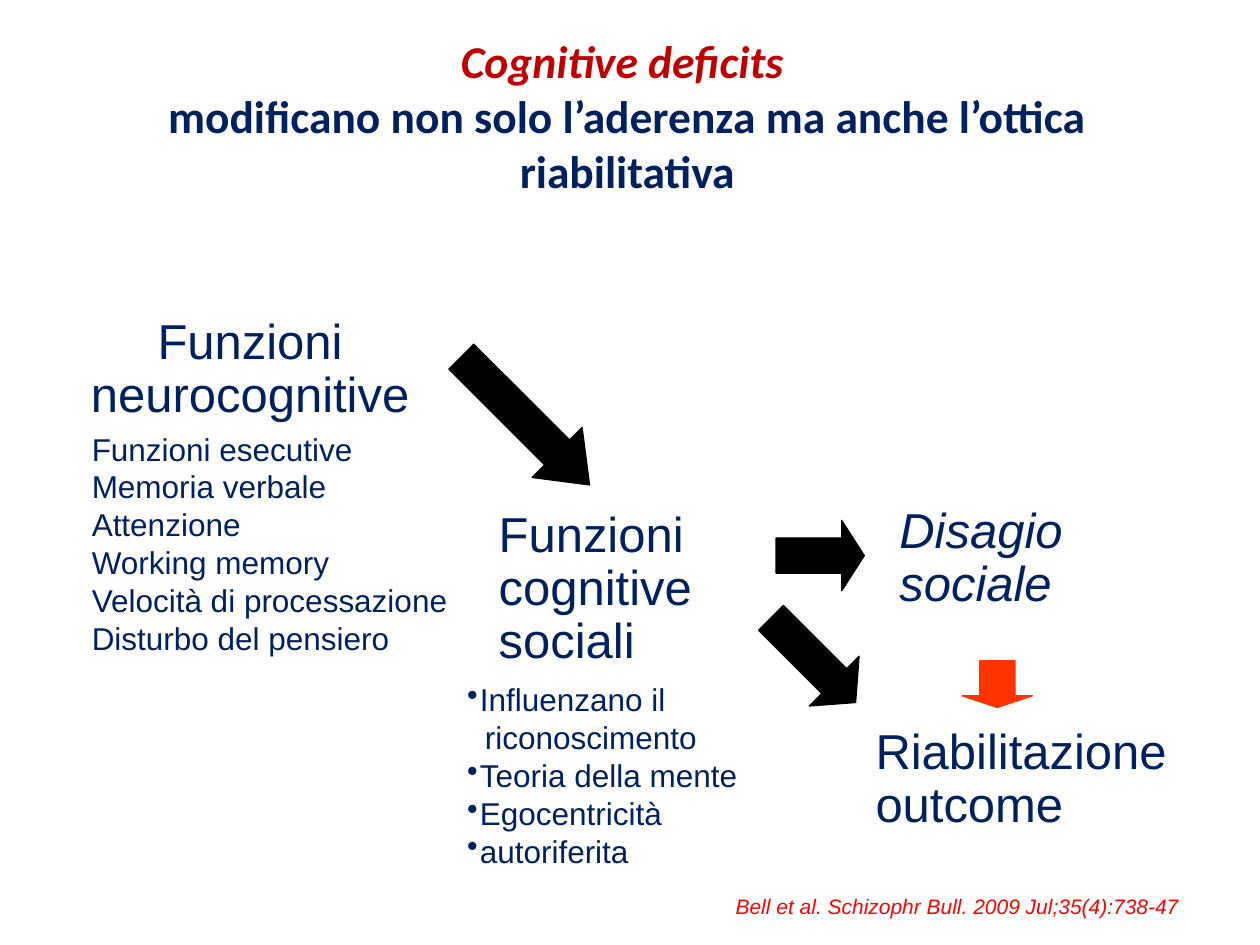
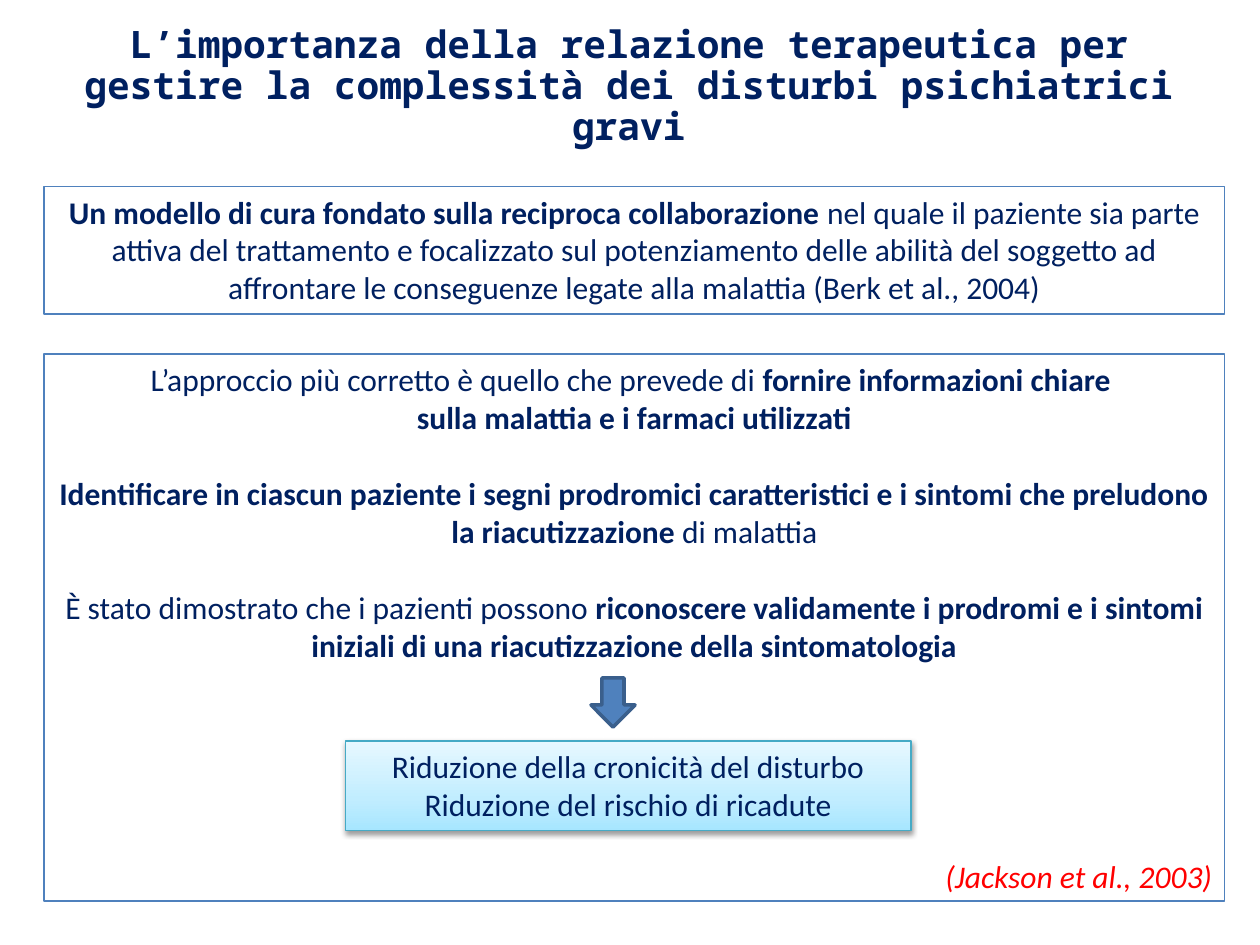
from dataclasses import dataclass

from pptx import Presentation
from pptx import util as u
from pptx.dml.color import RGBColor
from pptx.enum import shapes, text
from pptx.oxml import parse_xml
from pptx.oxml.ns import nsdecls, qn

COLUMNS, ROWS = 100, 75
CELL = u.Inches(0.1)
NAVY, RED, CRIMSON, ORANGE = "002060", "FF0000", "C00000", "FF3300"
BLACK, WHITE, BLUE, DARK_BLUE, TEAL = "000000", "FFFFFF", "4F81BD", "3A5F8C", "46AAC5"
LEFT, CENTER, RIGHT = text.PP_ALIGN.LEFT, text.PP_ALIGN.CENTER, text.PP_ALIGN.RIGHT
BODY_LINE = 22  # points taken by one line of 18-point Calibri


@dataclass
class Box:
    """An area measured in grid cells."""
    left: float
    top: float
    width: float
    height: float

    def area(self, column, row, width, height):
        return Box(self.left + column, self.top + row, width, height)

    def lengths(self):
        return [round(cells * CELL) for cells in (self.left, self.top, self.width, self.height)]


def color(hex_string):
    return RGBColor.from_string(hex_string)


def set_font(font, size, name, hex_string=NAVY, bold=False, italic=False):
    font.size, font.name = u.Pt(size), name
    font.color.rgb = color(hex_string)
    font.bold, font.italic = bold, italic


def next_paragraph(frame):
    """Return the first paragraph while it is unused, otherwise a new one."""
    first = frame.paragraphs[0]
    return frame.add_paragraph() if first.runs else first


def add_title(slide, box, name, size):
    """Place the title placeholder and return its paragraph."""
    title = slide.shapes.title
    title.left, title.top, title.width, title.height = box.lengths()
    frame = title.text_frame
    frame.auto_size = text.MSO_AUTO_SIZE.NONE
    frame.word_wrap = True
    frame.vertical_anchor = text.MSO_ANCHOR.MIDDLE
    paragraph = frame.paragraphs[0]
    paragraph.alignment = CENTER
    set_font(paragraph.font, size, name, bold=True)
    return paragraph


def add_text(slide, box, lines, size, hex_string=NAVY, italic=False,
             align=LEFT, spacing=1.0, wrap=False):
    frame = slide.shapes.add_textbox(*box.lengths()).text_frame
    frame.word_wrap = wrap
    for line in lines:
        paragraph = next_paragraph(frame)
        paragraph.text = line
        paragraph.alignment, paragraph.line_spacing = align, spacing
        set_font(paragraph.font, size, "Arial", hex_string, italic=italic)
    return frame


def add_heading(slide, box, lines, **style):
    add_text(slide, box, lines, 28, spacing=0.9, wrap=True, **style)


def set_bullet(paragraph, margin, indent, symbol=None):
    properties = paragraph._p.get_or_add_pPr()
    properties.set("marL", str(u.Inches(margin)))
    properties.set("indent", str(u.Inches(indent)))
    if symbol:
        bullet = parse_xml(f'<a:buChar {nsdecls("a")} char="{symbol}"/>')
        properties.find(qn("a:defRPr")).addprevious(bullet)


def add_shape(slide, kind, box, fill, line, line_width):
    shape = slide.shapes.add_shape(kind, *box.lengths())
    shape.shadow.inherit = False
    shape.fill.solid()
    shape.fill.fore_color.rgb = color(fill)
    shape.line.color.rgb = color(line)
    shape.line.width = u.Pt(line_width)
    return shape


def add_arrow(slide, box, head, rotation=0, hex_string=BLACK):
    arrow = add_shape(slide, shapes.MSO_SHAPE.RIGHT_ARROW, box, hex_string, hex_string, 0.75)
    arrow.adjustments[1] = head
    arrow.rotation = rotation


def add_panel(slide, box, paragraphs, line=BLUE, line_width=1):
    """Draw a framed text; each paragraph is a list of (wording, bold) runs."""
    panel = add_shape(slide, shapes.MSO_SHAPE.RECTANGLE, box, WHITE, line, line_width)
    frame = panel.text_frame
    frame.word_wrap = True
    frame.vertical_anchor = text.MSO_ANCHOR.TOP
    for runs in paragraphs:
        paragraph = next_paragraph(frame)
        paragraph.alignment = CENTER
        for wording, bold in runs:
            run = paragraph.add_run()
            run.text = wording
            set_font(run.font, 18, "Calibri", bold=bold)
    return panel


def add_glow(shape, stops):
    """Give a shape an upward gradient and a soft shadow below."""
    stop_xml = "".join(
        f'<a:gs pos="{percent * 1000}"><a:srgbClr val="{hex_string}"/></a:gs>'
        for percent, hex_string in stops)
    gradient = parse_xml(
        f'<a:gradFill {nsdecls("a")} rotWithShape="1"><a:gsLst>{stop_xml}</a:gsLst>'
        '<a:lin ang="16200000" scaled="0"/></a:gradFill>')
    shadow = parse_xml(
        f'<a:outerShdw {nsdecls("a")} blurRad="{u.Pt(3.1)}" dist="{u.Pt(1.6)}" '
        'dir="5400000" rotWithShape="0"><a:srgbClr val="000000">'
        '<a:alpha val="38000"/></a:srgbClr></a:outerShdw>')
    properties = shape._element.spPr
    properties.replace(properties.find(qn("a:solidFill")), gradient)
    properties.find(qn("a:effectLst")).append(shadow)


def neurocognition(slide, box):
    add_heading(slide, box.area(0, 0, 32.7, 8.2), ["Funzioni neurocognitive"], align=CENTER)
    add_text(slide, box.area(2.8, 8.9, 30.5, 19.2),
             ["Funzioni esecutive", "Memoria verbale", "Attenzione", "Working memory",
              "Velocità di processazione", "Disturbo del pensiero"], 18)


def social_cognition(slide, box):
    add_heading(slide, box.area(2.5, 0, 28.8, 8.2), ["Funzioni cognitive sociali"])
    effects = add_text(slide, box.area(0, 13.5, 23.6, 19.2),
                       ["Influenzano il", "riconoscimento", "Teoria della mente",
                        "Egocentricità", "autoriferita"], 18)
    for paragraph in effects.paragraphs:
        if paragraph.text == "riconoscimento":
            set_bullet(paragraph, 0.14, 0)
        else:
            set_bullet(paragraph, 0.1, -0.1, "•")


def outcomes(slide, box):
    add_heading(slide, box.area(1.9, 0, 22.4, 8.2), ["Disagio sociale"], italic=True)
    add_arrow(slide, box.area(8.8, 11.8, 3.7, 5.6), 0.25, 90, ORANGE)
    add_heading(slide, box.area(0, 17.5, 27.1, 8.2), ["Riabilitazione\voutcome"])


def deficits_slide(slide, page):
    title = add_title(slide, page.area(4.8, 2.9, 90, 12.5), "Calibri", 26)
    lead = title.add_run()
    lead.text = "Cognitive deficits "
    set_font(lead.font, 26, "Calibri", CRIMSON, True, True)
    title.add_line_break()
    title.add_run().text = "modificano non solo l’aderenza ma anche l’ottica riabilitativa"

    neurocognition(slide, page.area(3.5, 24.7, 33.3, 28.1))
    social_cognition(slide, page.area(36.1, 40, 31.3, 32.7))
    outcomes(slide, page.area(68.5, 39.7, 27.1, 25.7))
    add_arrow(slide, page.area(34.5, 30.6, 14.4, 5.6), 0.65, 45)
    add_arrow(slide, page.area(59.8, 49.6, 9.5, 5.6), 0.43, 45)
    add_arrow(slide, page.area(61.6, 41.3, 7, 5.6), 0.32)
    add_text(slide, page.area(57.4, 70.4, 37.4, 3),
             ["Bell et al. Schizophr Bull. 2009 Jul;35(4):738-47"], 12, RED, True)


def approach(slide, box):
    panel = add_panel(slide, box, [
        [("L’approccio più corretto è quello che prevede di ", False),
         ("fornire informazioni chiare ", True)],
        [("sulla malattia e i farmaci utilizzati", True)],
        [("Identificare in ciascun paziente i segni prodromici caratteristici e i sintomi "
          "che preludono la riacutizzazione ", True), ("di malattia", False)],
        [("È stato dimostrato che i pazienti possono ", False),
         ("riconoscere validamente i prodromi e i sintomi iniziali di una "
          "riacutizzazione della sintomatologia", True)],
        [("(Jackson et al., 2003)", False)],
    ])
    paragraphs = panel.text_frame.paragraphs
    for paragraph, empty_lines in zip(paragraphs[2:], (1, 1, 5)):
        paragraph.space_before = u.Pt(empty_lines * BODY_LINE)
    source = paragraphs[-1]
    source.alignment = RIGHT
    set_font(source.runs[0].font, 18, "Calibri", RED, italic=True)

    result = add_panel(slide, box.area(23.9, 30.7, 44.9, 7.1), [
        [("Riduzione della cronicità del disturbo", False)],
        [("Riduzione del rischio di ricadute", False)],
    ], TEAL, 0.75)
    add_glow(result, [(0, "A7E6FF"), (35, "C1EDFF"), (100, "E7F8FF")])
    add_shape(slide, shapes.MSO_SHAPE.DOWN_ARROW, box.area(43.4, 25.7, 3.5, 3.9),
              BLUE, DARK_BLUE, 2)


def relationship_slide(slide, page):
    title = add_title(slide, page.area(4.9, 0.7, 90, 12.5), "Noto Sans Mono", 21.6)
    title.line_spacing = 0.9
    title.add_run().text = ("L’importanza della relazione terapeutica per gestire "
                            "la complessità dei disturbi psichiatrici gravi")
    add_panel(slide, page.area(3.5, 14.8, 93.7, 10.1), [
        [("Un modello di cura fondato sulla reciproca collaborazione ", True),
         ("nel quale il paziente sia parte attiva del trattamento e focalizzato sul "
          "potenziamento delle abilità del soggetto ad affrontare le conseguenze legate "
          "alla malattia (Berk et al., 2004)", False)],
    ])
    approach(slide, page.area(3.5, 28.1, 93.7, 43.4))


def main():
    presentation = Presentation()
    presentation.slide_width, presentation.slide_height = COLUMNS * CELL, ROWS * CELL
    title_only = presentation.slide_layouts[5]
    for build in (deficits_slide, relationship_slide):
        build(presentation.slides.add_slide(title_only), Box(0, 0, COLUMNS, ROWS))
    presentation.save("out.pptx")


if __name__ == "__main__":
    main()
